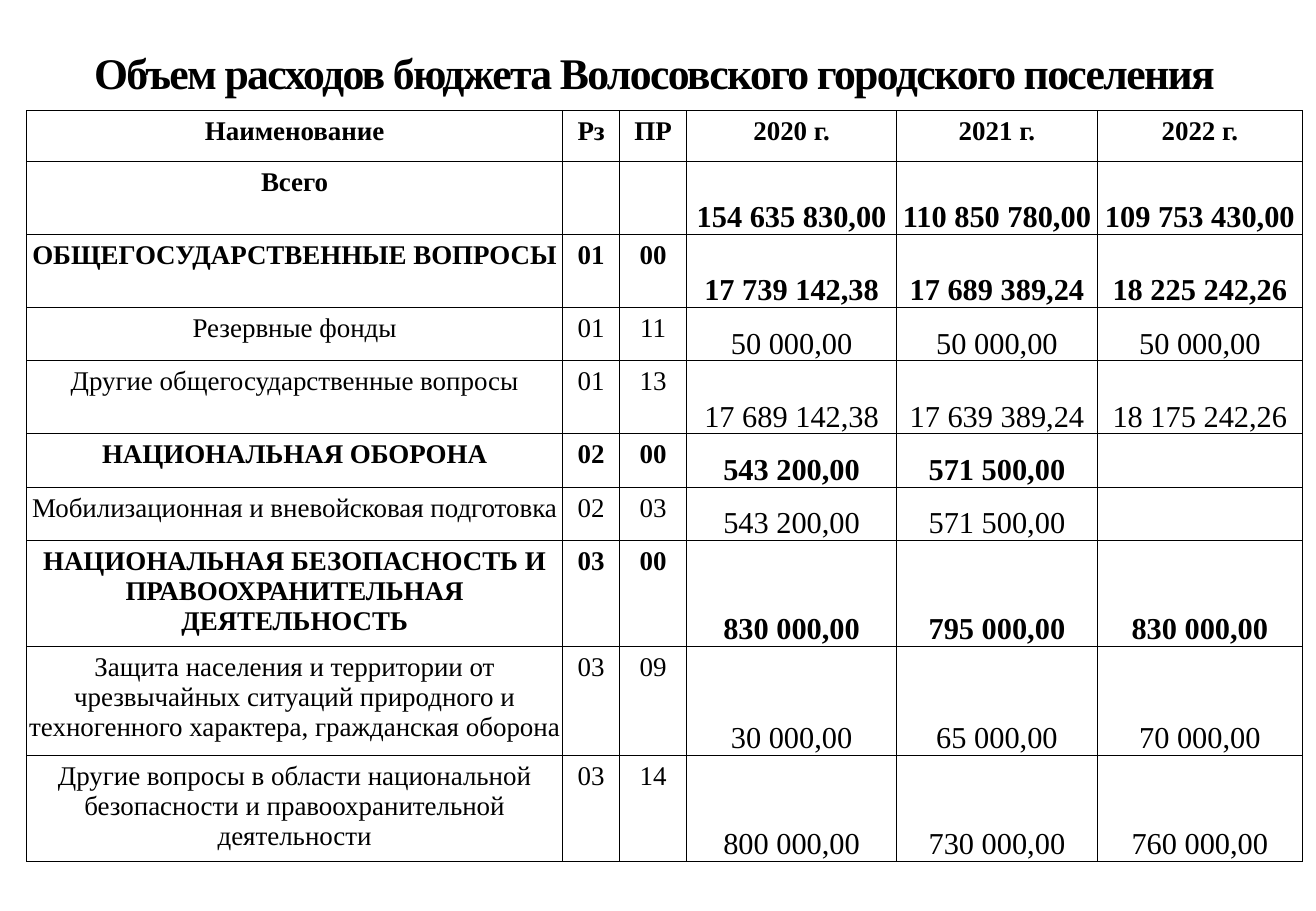
from dataclasses import dataclass
from typing import Any

from lxml.etree import SubElement
from pptx import Presentation
from pptx.dml.color import RGBColor as Color
from pptx.enum.text import MSO_ANCHOR as Anchor, PP_ALIGN as Align
from pptx.oxml import parse_xml as make_xml
from pptx.oxml.ns import nsdecls, qn
from pptx.slide import Slide
from pptx.table import Table, _Cell as Cell
from pptx.util import Inches, Pt


@dataclass(frozen=True)
class Theme:
    face: str = "Times New Roman"
    ink: str = "000000"
    head: float = 25.9
    label: float = 16
    value: float = 18
    rule: float = 0.5


@dataclass(frozen=True)
class Line:
    name: str
    group: str
    sub: str
    sums: tuple[str, str, str]
    high: float
    bold: bool = False


THEME = Theme()
TITLE = "Объем расходов бюджета Волосовского городского поселения"
WIDTHS = (4.41, 0.47, 0.55, 1.73, 1.65, 1.69)
LINES = (
    Line("Наименование", "Рз", "ПР", ("2020 г.", "2021 г.", "2022 г."), 0.42, True),
    Line("Всего", "", "", ("154 635 830,00", "110 850 780,00", "109 753 430,00"), 0.6, True),
    Line("ОБЩЕГОСУДАРСТВЕННЫЕ ВОПРОСЫ", "01", "00",
         ("17 739 142,38", "17 689 389,24", "18 225 242,26"), 0.6, True),
    Line("Резервные фонды", "01", "11", ("50 000,00", "50 000,00", "50 000,00"), 0.44),
    Line("Другие общегосударственные вопросы", "01", "13",
         ("17 689 142,38", "17 639 389,24", "18 175 242,26"), 0.6),
    Line("НАЦИОНАЛЬНАЯ ОБОРОНА", "02", "00", ("543 200,00", "571 500,00", ""), 0.44, True),
    Line("Мобилизационная и вневойсковая подготовка", "02", "03",
         ("543 200,00", "571 500,00", ""), 0.44),
    Line("НАЦИОНАЛЬНАЯ БЕЗОПАСНОСТЬ И ПРАВООХРАНИТЕЛЬНАЯ ДЕЯТЕЛЬНОСТЬ", "03", "00",
         ("830 000,00", "795 000,00", "830 000,00"), 0.87, True),
    Line("Защита населения и территории от чрезвычайных ситуаций природного и "
         "техногенного характера, гражданская оборона", "03", "09",
         ("30 000,00", "65 000,00", "70 000,00"), 0.9),
    Line("Другие вопросы в области национальной безопасности и правоохранительной "
         "деятельности", "03", "14", ("800 000,00", "730 000,00", "760 000,00"), 0.87),
)
SIDES = {"margin_left": Inches(0.01), "margin_right": Inches(0.01)}
LABEL = SIDES | {"margin_top": Inches(0.05), "margin_bottom": Inches(0.05),
                 "vertical_anchor": Anchor.TOP}
VALUE = SIDES | {"margin_top": Inches(0.01), "margin_bottom": 0,
                 "vertical_anchor": Anchor.BOTTOM}


def apply(item: Any, form: dict[str, Any]) -> None:
    for key, value in form.items():
        setattr(item, key, value)


def write(frame: Any, text: str, size: float, bold: bool) -> None:
    para = frame.paragraphs[0]
    para.alignment = Align.CENTER
    if text:
        run = para.add_run()
        run.text = text
        font = run.font
    else:
        font = para.font
    apply(font, {"name": THEME.face, "size": Pt(size), "bold": bold})
    font.color.rgb = Color.from_string(THEME.ink)


def edge(cell: Cell) -> None:
    props = cell._tc.get_or_add_tcPr()
    for spot, side in enumerate("LRTB"):
        line = make_xml(f'<a:ln{side} {nsdecls("a")} w="{Pt(THEME.rule)}"/>')
        fill = SubElement(line, qn("a:solidFill"))
        SubElement(fill, qn("a:srgbClr"), val=THEME.ink)
        props.insert(spot, line)


def draw_title(slide: Slide) -> None:
    title = slide.shapes.title
    apply(title, {"left": Inches(0.51), "top": Inches(0.23),
                  "width": Inches(9.75), "height": Inches(0.63)})
    frame = title.text_frame
    apply(frame, {"word_wrap": True, "vertical_anchor": Anchor.BOTTOM,
                  "margin_left": Inches(0.1), "margin_right": Inches(0.1),
                  "margin_top": Inches(0.05), "margin_bottom": Inches(0.05)})
    write(frame, TITLE, THEME.head, True)
    frame.paragraphs[0].runs[0].font._element.set("spc", "-100")


def draw_line(table: Table, row: int, line: Line) -> None:
    table.rows[row].height = Inches(line.high)
    for col, text in enumerate((line.name, line.group, line.sub, *line.sums)):
        is_sum = row > 0 and col > 2
        cell = table.cell(row, col)
        apply(cell, VALUE if is_sum else LABEL)
        cell.fill.background()
        edge(cell)
        size = THEME.value if is_sum else THEME.label
        write(cell.text_frame, text, size, line.bold)


def draw_table(slide: Slide) -> None:
    high = sum(line.high for line in LINES)
    table = slide.shapes.add_table(
        len(LINES), len(WIDTHS), Inches(0.22), Inches(0.91),
        Inches(sum(WIDTHS)), Inches(high)).table
    apply(table, {"first_row": False, "horz_banding": False})
    for col, width in zip(table.columns, WIDTHS):
        col.width = Inches(width)
    for row, line in enumerate(LINES):
        draw_line(table, row, line)


def main() -> None:
    deck = Presentation()
    apply(deck, {"slide_width": Inches(10.83), "slide_height": Inches(7.5)})
    slide = deck.slides.add_slide(deck.slide_layouts[5])
    draw_title(slide)
    draw_table(slide)
    deck.save("out.pptx")


if __name__ == "__main__":
    main()
